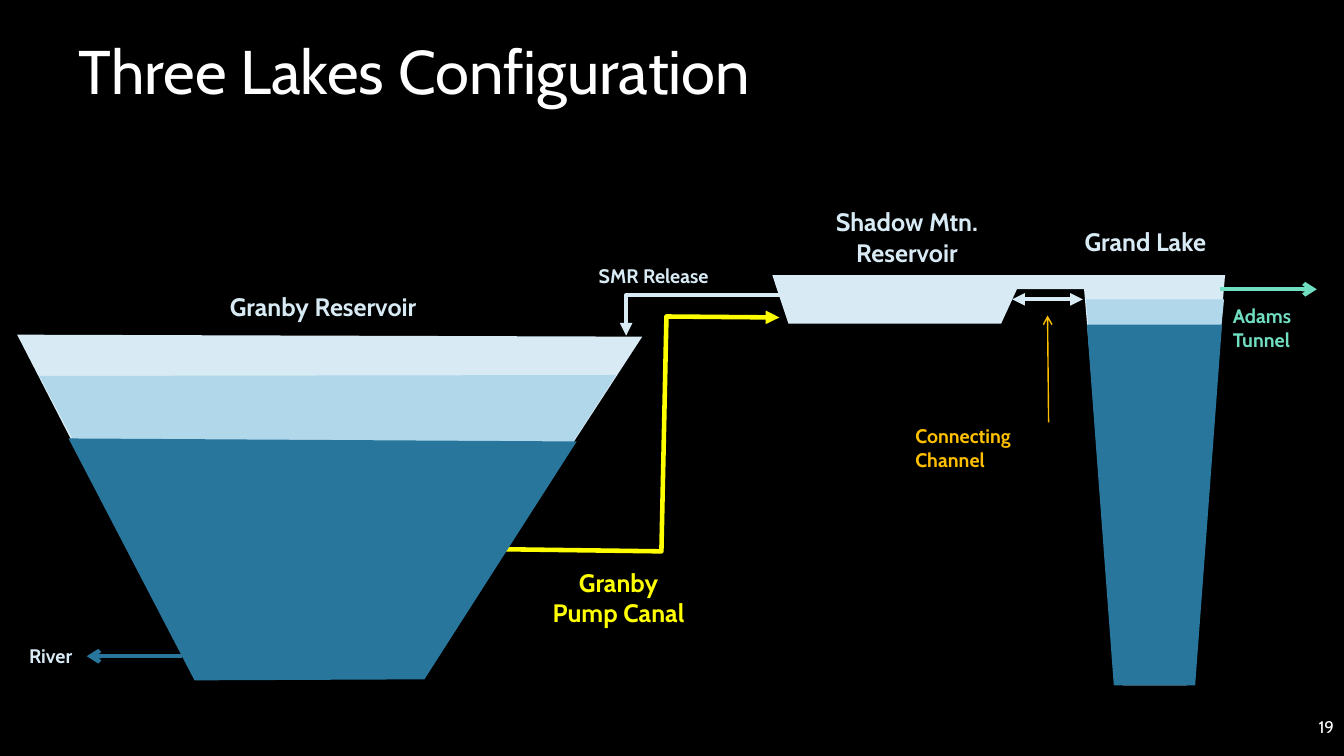
from lxml import etree
from pptx import Presentation
from pptx.dml.color import RGBColor
from pptx.enum.shapes import MSO_CONNECTOR, MSO_SHAPE
from pptx.enum.text import MSO_ANCHOR, PP_ALIGN
from pptx.oxml.ns import qn
from pptx.util import Inches, Pt

BLACK = RGBColor(0x00, 0x00, 0x00)
WHITE = RGBColor(0xFF, 0xFF, 0xFF)
PALE = RGBColor(0xD8, 0xEB, 0xF5)
LIGHT = RGBColor(0xB1, 0xD7, 0xEB)
DEEP = RGBColor(0x29, 0x76, 0x9D)
YELLOW = RGBColor(0xFF, 0xFF, 0x00)
ORANGE = RGBColor(0xFF, 0xC0, 0x00)
GREEN = RGBColor(0x70, 0xDE, 0xC1)
FONT = "Cabin"
LEFT, CENTER, RIGHT = PP_ALIGN.LEFT, PP_ALIGN.CENTER, PP_ALIGN.RIGHT

TITLE = "Three Lakes Configuration"
PAGE_NUMBER = "19"

# paragraphs, (left, top, width, height), size, colour, alignment
LABELS = [
    (["Grand Lake"], (10.56, 2.2, 1.6, 0.4), 18, PALE, CENTER),
    (["Shadow Mtn.", "Reservoir"], (6.89, 2, 4.21, 0.71), 18, PALE, CENTER),
    (["Granby Reservoir"], (1.1, 2.84, 4.21, 0.4), 18, PALE, CENTER),
    (["Granby Pump Canal"], (5.32, 5.58, 1.63, 0.71), 18, YELLOW, CENTER),
    (["Connecting Channel"], (8.98, 4.16, 1.83, 0.34), 14, ORANGE, LEFT),
    (["River"], (0.19, 6.34, 1.83, 0.34), 14, PALE, LEFT),
    (["SMR Release"], (5.84, 2.57, 1.83, 0.34), 14, PALE, LEFT),
    (["Adams Tunnel"], (12.13, 2.97, 1.18, 0.57), 14, GREEN, LEFT),
]

# outline, colour
GRANBY_LAYERS = [
    ([(6.37, 3.34), (4.17, 6.72), (1.93, 6.74), (0.17, 3.32)], PALE),
    ([(6.11, 3.72), (4.18, 6.72), (1.98, 6.74), (0.39, 3.73)], LIGHT),
    ([(5.72, 4.38), (4.21, 6.74), (1.93, 6.75), (0.68, 4.35)], DEEP),
]
SHADOW_MTN = [(10.15, 2.73), (9.93, 3.21), (7.82, 3.21), (7.66, 2.73)]
CHANNEL = (10.04, 2.73, 0.84, 0.14)
# box, slant, colour
GRAND_LAYERS = [
    ((10.74, 2.73, 1.41, 4.06), 0.244, PALE),
    ((10.77, 2.97, 1.37, 3.83), 0.269, LIGHT),
    ((10.78, 3.22, 1.34, 3.58), 0.199, DEEP),
]

PUMP_CANAL = [(4.29, 5.44), (6.56, 5.47), (6.61, 3.14), (7.73, 3.15)]
SMR_RELEASE = [(7.77, 2.93), (6.21, 2.93), (6.21, 3.33)]
# start, end, colour, width, arrowheads
ARROWS = [
    ((12.1, 2.87), (13.06, 2.87), GREEN, 3, {"tailEnd": "arrow"}),
    ((10.4, 4.19), (10.39, 3.13), ORANGE, 1, {"tailEnd": "arrow"}),
    ((1.81, 6.51), (0.86, 6.51), DEEP, 3, {"tailEnd": "arrow"}),
    ((10.04, 2.97), (10.74, 2.97), PALE, 3,
     {"headEnd": "triangle", "tailEnd": "triangle"}),
]


def inches(values):
    return [Inches(v) for v in values]


def add_text(s, paragraphs, box, size, color, align, bold=True,
             anchor=MSO_ANCHOR.TOP):
    tf = s.shapes.add_textbox(*inches(box)).text_frame
    tf.word_wrap = True
    tf.vertical_anchor = anchor
    for i, text in enumerate(paragraphs):
        p = tf.paragraphs[0] if i == 0 else tf.add_paragraph()
        p.text = text
        p.alignment = align
        style(p, size, color, bold)


def style(p, size, color, bold):
    p.font.name = FONT
    p.font.size = Pt(size)
    p.font.bold = bold
    p.font.color.rgb = color


def set_line(sp, color, width, ends):
    """Colour the line and give it arrowheads; ends maps headEnd/tailEnd to a type."""
    sp.line.color.rgb = color
    sp.line.width = Pt(width)
    ln = sp.line._get_or_add_ln()
    for tag, kind in ends.items():
        etree.SubElement(ln, qn("a:" + tag), type=kind)


def fill_water(sp, color):
    sp.shadow.inherit = False
    sp.fill.solid()
    sp.fill.fore_color.rgb = color
    sp.line.fill.background()


def add_outline(s, points, close):
    """Build a freeform from points in inches, on a grid of 0.01 inch."""
    grid = [(round(x * 100), round(y * 100)) for x, y in points]
    builder = s.shapes.build_freeform(*grid[0], scale=Inches(0.01))
    builder.add_line_segments(grid[1:], close=close)
    return builder.convert_to_shape()


def add_pipe(s, points, color, width):
    sp = add_outline(s, points, close=False)
    sp.shadow.inherit = False
    sp.fill.background()
    set_line(sp, color, width, {"tailEnd": "triangle"})


def add_arrow(s, start, end, color, width, ends):
    line = s.shapes.add_connector(MSO_CONNECTOR.STRAIGHT, *inches(start + end))
    set_line(line, color, width, ends)
    etree.SubElement(line._element.spPr, qn("a:effectLst"))


def add_title(s):
    title = s.shapes.title
    title.left, title.top, title.width, title.height = inches(
        (0.68, 0.24, 12.18, 0.99))
    tf = title.text_frame
    tf.text = TITLE
    tf.vertical_anchor = MSO_ANCHOR.MIDDLE
    p = tf.paragraphs[0]
    p.alignment = LEFT
    p.line_spacing = 0.9
    style(p, 44, WHITE, False)


def main():
    prs = Presentation()
    prs.slide_width, prs.slide_height = Inches(13.33), Inches(7.5)
    s = prs.slides.add_slide(prs.slide_layouts[5])
    s.background.fill.solid()
    s.background.fill.fore_color.rgb = BLACK
    add_title(s)

    add_pipe(s, PUMP_CANAL, YELLOW, 3.25)
    add_pipe(s, SMR_RELEASE, PALE, 3)
    for outline, color in GRANBY_LAYERS + [(SHADOW_MTN, PALE)]:
        fill_water(add_outline(s, outline, close=True), color)
    channel = s.shapes.add_shape(MSO_SHAPE.RECTANGLE, *inches(CHANNEL))
    fill_water(channel, PALE)
    for box, slant, color in GRAND_LAYERS:
        sp = s.shapes.add_shape(MSO_SHAPE.TRAPEZOID, *inches(box))
        sp.rotation = 180
        sp.adjustments[0] = slant
        fill_water(sp, color)

    for arrow in ARROWS:
        add_arrow(s, *arrow)
    for label in LABELS:
        add_text(s, *label)
    add_text(s, [PAGE_NUMBER], (8.9, 6.96, 4.43, 0.51), 12, WHITE, RIGHT,
             bold=False, anchor=MSO_ANCHOR.MIDDLE)
    prs.save("out.pptx")


if __name__ == "__main__":
    main()
